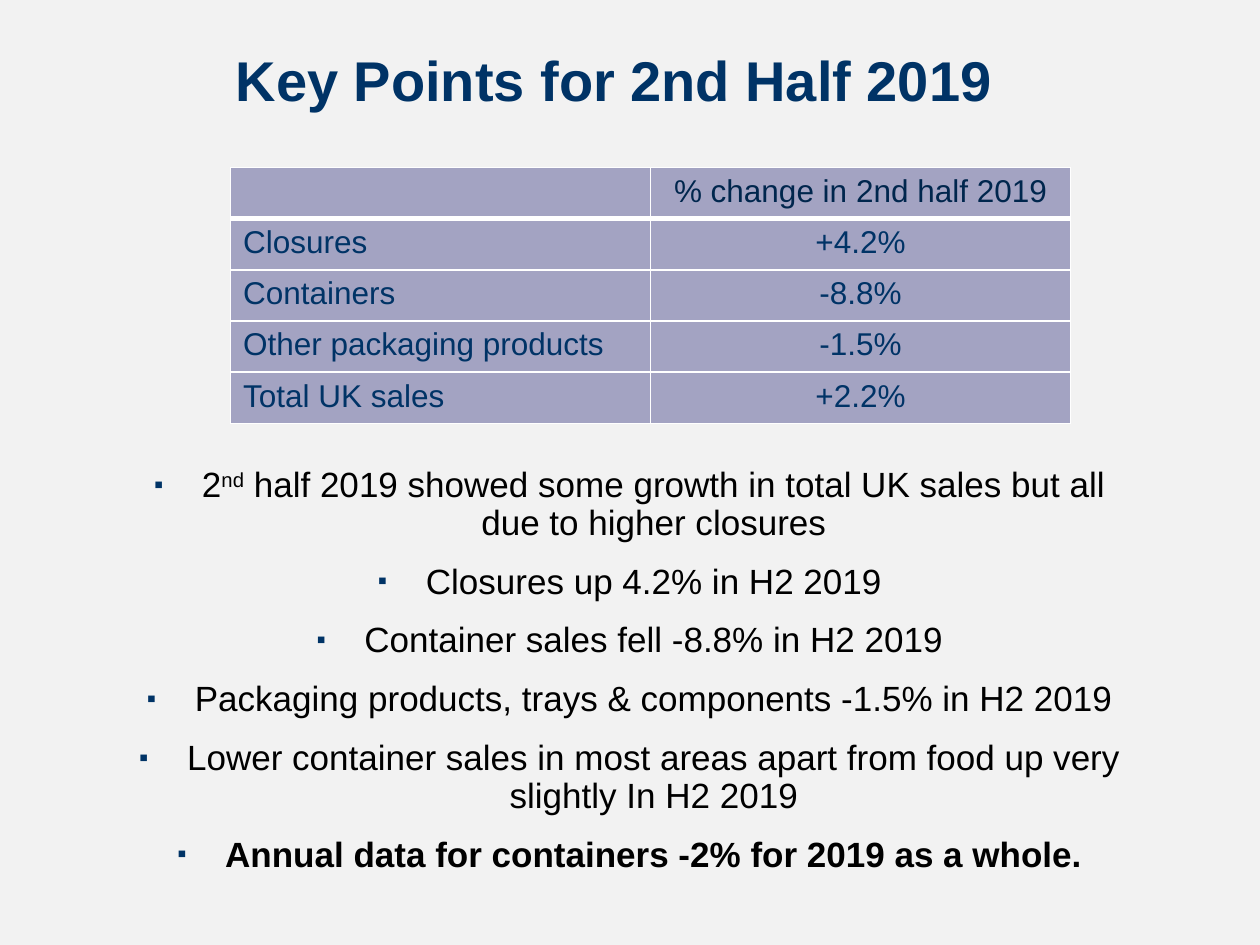
from lxml.etree import SubElement
from pptx import Presentation
from pptx.dml.color import RGBColor
from pptx.enum.text import MSO_ANCHOR as Anchor, PP_ALIGN as Align
from pptx.oxml.ns import qn
from pptx.util import Inches, Pt

FONT = "Arial"
COLORS = {
    "background": "F2F2F2",
    "navy": "003366",
    "header": "00264D",
    "cell": "A3A3C2",
    "border": "FFFFFF",
    "body": "000000",
}
TITLE = "Key Points for 2nd Half 2019"
ROWS = [
    ("", "% change in 2nd half 2019"),
    ("Closures", "+4.2%"),
    ("Containers", "-8.8%"),
    ("Other packaging products", "-1.5%"),
    ("Total UK sales", "+2.2%"),
]
# Each bullet is a list of (text, style) runs
BULLETS = [
    [("2", ""), ("nd", "superscript"),
     (" half 2019 showed some growth in total UK sales but all due to higher closures", "")],
    [("Closures up 4.2% in H2 2019", "")],
    [("Container sales fell -8.8% in H2 2019", "")],
    [("Packaging products, trays & components -1.5% in H2 2019", "")],
    [("Lower container sales in most areas apart from food up very slightly In H2 2019", "")],
    [("Annual data for containers -2% for 2019 as a whole.", "bold")],
]

SLIDE_WIDTH, SLIDE_HEIGHT = Inches(10), Inches(7.5)
TABLE_LEFT, TABLE_TOP = Inches(1.83), Inches(1.33)
TABLE_WIDTH = SLIDE_WIDTH * 2 // 3
ROW_HEIGHT = Inches(2.03) // len(ROWS)
BULLET_INDENT = Inches(0.38)


def format_run(run, size, color, bold=False):
    run.font.name = FONT
    run.font.size = Pt(size)
    run.font.bold = bold
    run.font.color.rgb = RGBColor.from_string(COLORS[color])


def add_text_frame(slide, left, top, width, height):
    box = slide.shapes.add_textbox(*map(Inches, (left, top, width, height)))
    box.text_frame.word_wrap = True
    return box.text_frame


def add_title(slide):
    frame = add_text_frame(slide, 0.71, 0.33, 8.58, 0.66)
    frame.vertical_anchor = Anchor.MIDDLE
    frame.margin_right = Inches(0.35)
    frame.text = TITLE
    paragraph = frame.paragraphs[0]
    paragraph.alignment = Align.CENTER
    paragraph.line_spacing = 0.9
    format_run(paragraph.runs[0], 32, "navy", bold=True)


def set_borders(cell, widths):
    """Draw the cell's edges; widths maps L, R, T, B to points."""
    properties = cell._tc.get_or_add_tcPr()
    for index, (side, width) in enumerate(widths.items()):
        line = properties.makeelement(qn(f"a:ln{side}"), {"w": str(Pt(width))})
        fill = SubElement(line, qn("a:solidFill"))
        SubElement(fill, qn("a:srgbClr"), val=COLORS["border"])
        properties.insert(index, line)


def add_sales_table(slide):
    table = slide.shapes.add_table(
        len(ROWS), len(ROWS[0]), TABLE_LEFT, TABLE_TOP,
        TABLE_WIDTH, ROW_HEIGHT * len(ROWS)).table
    table.first_row = table.horz_banding = False
    for row_index, values in enumerate(ROWS):
        table.rows[row_index].height = ROW_HEIGHT
        for column_index, value in enumerate(values):
            cell = table.cell(row_index, column_index)
            cell.fill.solid()
            cell.fill.fore_color.rgb = RGBColor.from_string(COLORS["cell"])
            set_borders(cell, {
                "L": 1, "R": 1,
                "T": 3 if row_index == 1 else 1,
                "B": 3 if row_index == 0 else 1,
            })
            cell.text = value
            paragraph = cell.text_frame.paragraphs[0]
            paragraph.alignment = Align.CENTER if column_index else Align.LEFT
            for run in paragraph.runs:
                format_run(run, 18, "navy" if row_index else "header")


def set_bullet(paragraph):
    properties = paragraph._p.get_or_add_pPr()
    properties.set("marL", str(BULLET_INDENT))
    properties.set("indent", str(-BULLET_INDENT))
    color = SubElement(properties, qn("a:buClr"))
    SubElement(color, qn("a:srgbClr"), val=COLORS["navy"])
    SubElement(properties, qn("a:buSzPct"), val="75000")
    SubElement(properties, qn("a:buFont"), typeface=FONT)
    SubElement(properties, qn("a:buChar"), char="▪")


def add_bullets(slide):
    frame = add_text_frame(slide, 1, 3.66, 8, 3.35)
    for index, runs in enumerate(BULLETS):
        paragraph = frame.add_paragraph() if index else frame.paragraphs[0]
        paragraph.alignment = Align.CENTER
        paragraph.line_spacing = 0.9
        paragraph.space_before = Pt(12 if index else 0)
        set_bullet(paragraph)
        for text, style in runs:
            run = paragraph.add_run()
            run.text = text
            format_run(run, 20, "body", bold=style == "bold")
            if style == "superscript":
                run._r.get_or_add_rPr().set("baseline", "30000")


def main():
    presentation = Presentation()
    presentation.slide_width, presentation.slide_height = SLIDE_WIDTH, SLIDE_HEIGHT
    slide = presentation.slides.add_slide(presentation.slide_layouts[6])
    slide.background.fill.solid()
    slide.background.fill.fore_color.rgb = RGBColor.from_string(COLORS["background"])
    add_title(slide)
    add_bullets(slide)
    add_sales_table(slide)
    presentation.save("out.pptx")


if __name__ == "__main__":
    main()
